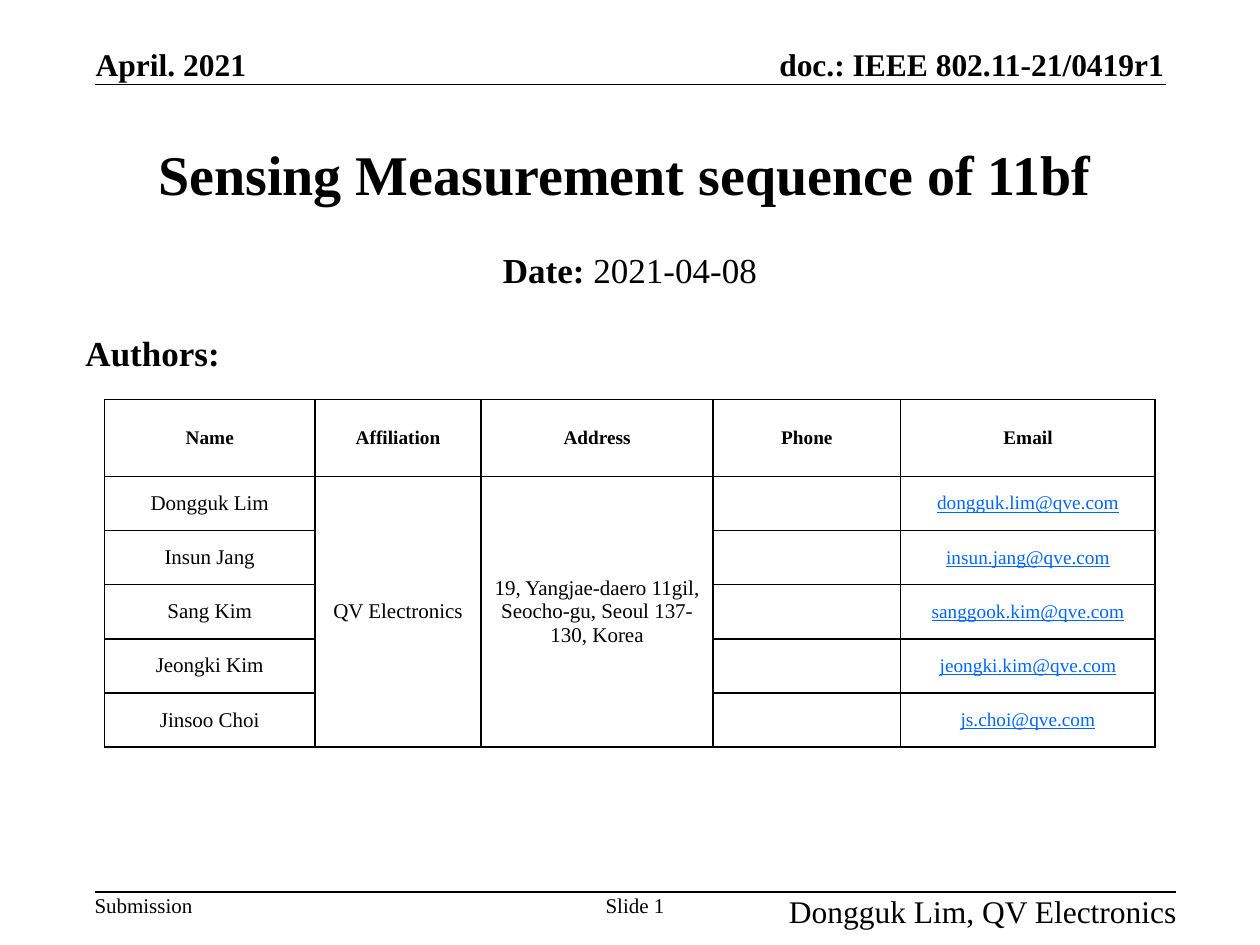
import dataclasses

import lxml.etree
import pptx
import pptx.dml.color
import pptx.enum.shapes
import pptx.enum.text
import pptx.oxml.ns
import pptx.util

Inches = pptx.util.Inches
ALIGN = pptx.enum.text.PP_ALIGN
ANCHOR = pptx.enum.text.MSO_ANCHOR
BLACK, LINK_BLUE = "000000", "0066FF"
COMPANY = "QV Electronics"
ADDRESS = "19, Yangjae-daero 11gil, Seocho-gu, Seoul 137-130, Korea"
HEADINGS = ("Name", "Affiliation", "Address", "Phone", "Email")
COLUMN_WIDTHS = (1.67, 1.32, 1.84, 1.49, 2.02)
HEADING_HEIGHT, AUTHOR_HEIGHT = 0.61, 0.43


@dataclasses.dataclass(frozen=True)
class Label:
    text: str
    left: float
    top: float
    width: float
    height: float
    size: float
    bold: bool = False
    align: ALIGN = ALIGN.LEFT
    anchor: ANCHOR = ANCHOR.TOP
    inset: tuple[float, float] = (0, 0)
    wrap: bool = False
    tail: str = ""


@dataclasses.dataclass(frozen=True)
class Author:
    name: str
    email: str


@dataclasses.dataclass(frozen=True)
class Rule:
    top: float
    right: float


LABELS = (
    Label("April. 2021", 0.76, 0.36, 1.21, 0.3, 18, bold=True, anchor=ANCHOR.BOTTOM),
    Label("doc.: IEEE 802.11-21/0419r1", 5.65, 0.36, 3.59, 0.3, 18, bold=True,
          align=ALIGN.RIGHT, anchor=ANCHOR.BOTTOM),
    Label("Sensing Measurement sequence of 11bf", 0.42, 0.75, 9.08, 1.25, 32, bold=True,
          align=ALIGN.CENTER, anchor=ANCHOR.MIDDLE, inset=(0.1, 0.05), wrap=True),
    Label("Date:", 0.75, 1.92, 8.5, 0.42, 20, bold=True, align=ALIGN.CENTER,
          inset=(0.1, 0.05), wrap=True, tail=" 2021-04-08"),
    Label("Authors:", 0.58, 2.58, 1.58, 0.42, 20, bold=True, inset=(0.1, 0.05), wrap=True),
    Label("Submission", 0.75, 7.08, 0.78, 0.2, 12),
    Label("Slide 1", 4.75, 7.08, 0.58, 0.2, 12, align=ALIGN.CENTER),
    Label(f"Dongguk Lim, {COMPANY}", 6.24, 7.08, 3.1, 0.3, 18, align=ALIGN.RIGHT),
)
RULES = (Rule(0.67, 9.25), Rule(7.08, 9.33))
AUTHORS = (
    Author("Dongguk Lim", "dongguk.lim@qve.com"),
    Author("Insun Jang", "insun.jang@qve.com"),
    Author("Sang Kim", "sanggook.kim@qve.com"),
    Author("Jeongki Kim", "jeongki.kim@qve.com"),
    Author("Jinsoo Choi", "js.choi@qve.com"),
)


def color(hex_code: str) -> pptx.dml.color.RGBColor:
    return pptx.dml.color.RGBColor.from_string(hex_code)


def write(paragraph, text: str, *, size: float, bold: bool = False, ink: str = BLACK,
          underline: bool = False, align: ALIGN = ALIGN.LEFT) -> None:
    paragraph.alignment = align
    run = paragraph.add_run()
    run.text = text
    run.font.name = "Times New Roman"
    run.font.size = pptx.util.Pt(size)
    run.font.bold = bold
    run.font.underline = underline
    run.font.color.rgb = color(ink)


def draw_label(slide, label: Label) -> None:
    box = slide.shapes.add_textbox(
        Inches(label.left), Inches(label.top), Inches(label.width), Inches(label.height))
    frame = box.text_frame
    frame.word_wrap = label.wrap
    frame.vertical_anchor = label.anchor
    frame.margin_left = frame.margin_right = Inches(label.inset[0])
    frame.margin_top = frame.margin_bottom = Inches(label.inset[1])
    paragraph = frame.paragraphs[0]
    write(paragraph, label.text, size=label.size, bold=label.bold, align=label.align)
    if label.tail:
        write(paragraph, label.tail, size=label.size, align=label.align)


def draw_rule(slide, rule: Rule) -> None:
    line = slide.shapes.add_connector(
        pptx.enum.shapes.MSO_CONNECTOR.STRAIGHT,
        Inches(0.75), Inches(rule.top), Inches(rule.right), Inches(rule.top))
    line.line.color.rgb = color(BLACK)
    line.line.width = pptx.util.Pt(1)
    properties = line._element.spPr
    lxml.etree.SubElement(properties, pptx.oxml.ns.qn("a:effectLst"))


def style_cell(cell, is_heading: bool) -> None:
    cell.vertical_anchor = ANCHOR.MIDDLE
    cell.margin_left = cell.margin_right = Inches(0.1 if is_heading else 0.07)
    cell.margin_top = cell.margin_bottom = Inches(0.05 if is_heading else 0)
    cell.fill.background()
    properties = cell._tc.get_or_add_tcPr()
    for position, side in enumerate(("L", "R", "T", "B")):
        border = pptx.oxml.parse_xml(
            f'<a:ln{side} {pptx.oxml.ns.nsdecls("a")} w="{pptx.util.Pt(1)}">'
            f'<a:solidFill><a:srgbClr val="{BLACK}"/></a:solidFill></a:ln{side}>')
        properties.insert(position, border)


def draw_authors(slide, authors: tuple[Author, ...]) -> None:
    heights = (HEADING_HEIGHT, *[AUTHOR_HEIGHT] * len(authors))
    table = slide.shapes.add_table(
        len(heights), len(HEADINGS), Inches(0.83), Inches(3.17),
        Inches(sum(COLUMN_WIDTHS)), Inches(sum(heights))).table
    table.first_row = table.horz_banding = False
    for column, width in zip(table.columns, COLUMN_WIDTHS):
        column.width = Inches(width)
    for index, (row, height) in enumerate(zip(table.rows, heights)):
        row.height = Inches(height)
        for cell in row.cells:
            style_cell(cell, is_heading=index == 0)

    def fill(row: int, column: int, text: str, **style) -> None:
        paragraph = table.cell(row, column).text_frame.paragraphs[0]
        write(paragraph, text, align=ALIGN.CENTER, **style)

    for column, heading in enumerate(HEADINGS):
        fill(0, column, heading, size=11, bold=True)
    for row, author in enumerate(authors, start=1):
        fill(row, 0, author.name, size=12)
        fill(row, 4, author.email, size=11, ink=LINK_BLUE, underline=True)
    for column, shared in ((1, COMPANY), (2, ADDRESS)):
        table.cell(1, column).merge(table.cell(len(authors), column))
        fill(1, column, shared, size=12)


def main() -> None:
    """Build the title slide with its author table."""
    presentation = pptx.Presentation()
    presentation.slide_width = Inches(10)
    presentation.slide_height = Inches(7.5)
    slide = presentation.slides.add_slide(presentation.slide_layouts[6])
    for rule in RULES:
        draw_rule(slide, rule)
    for label in LABELS:
        draw_label(slide, label)
    draw_authors(slide, AUTHORS)
    presentation.save("out.pptx")


if __name__ == "__main__":
    main()
